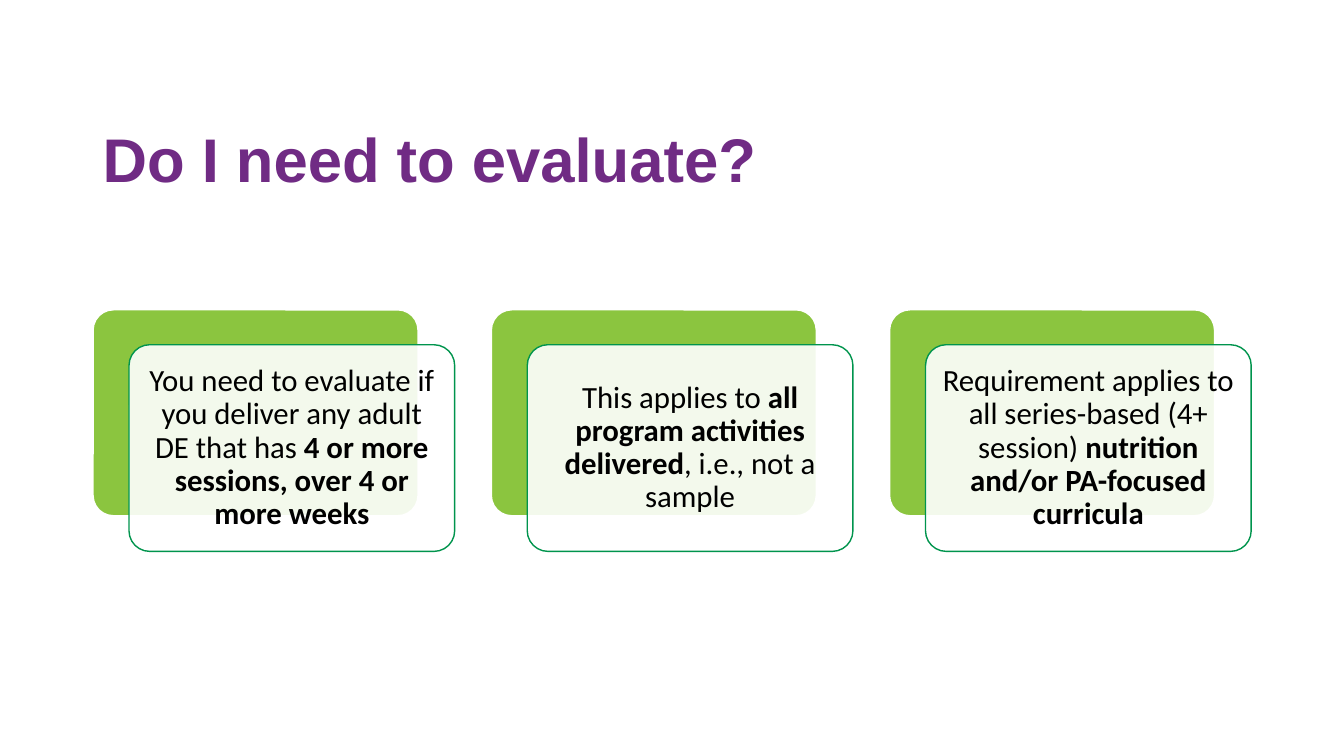
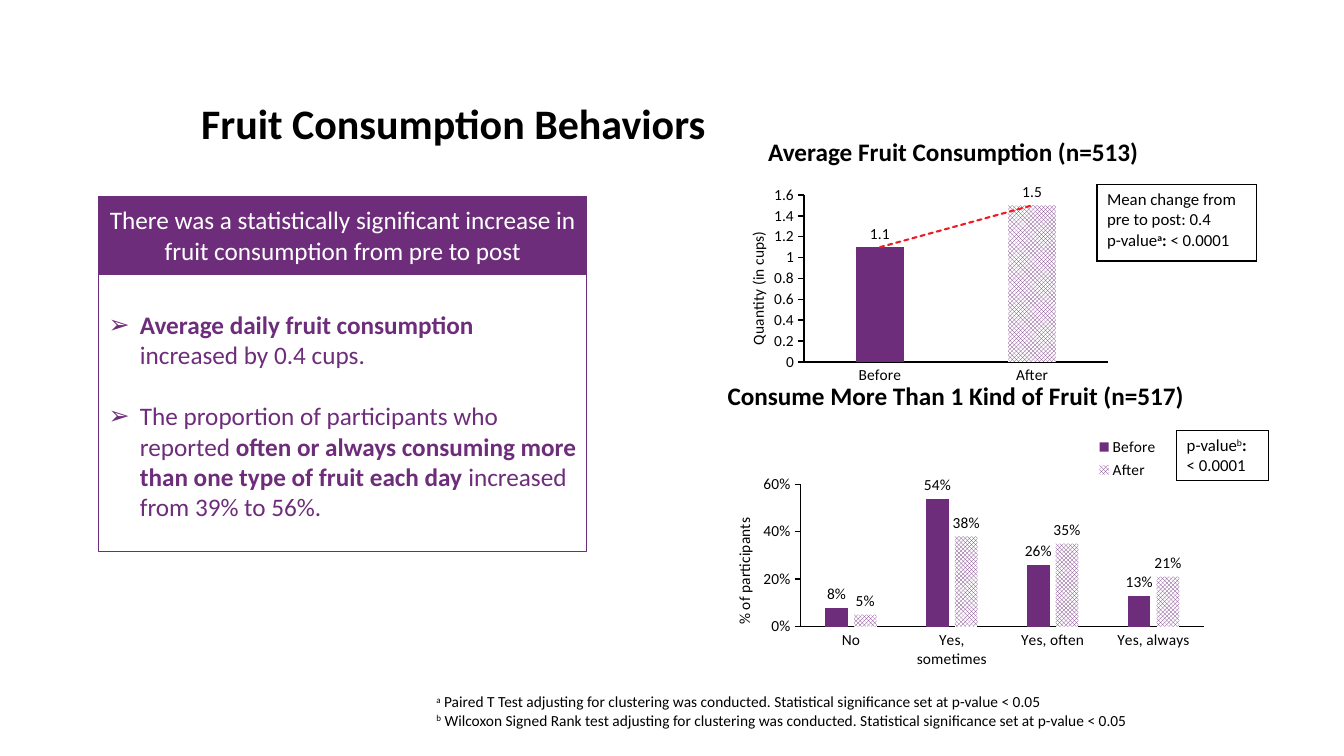
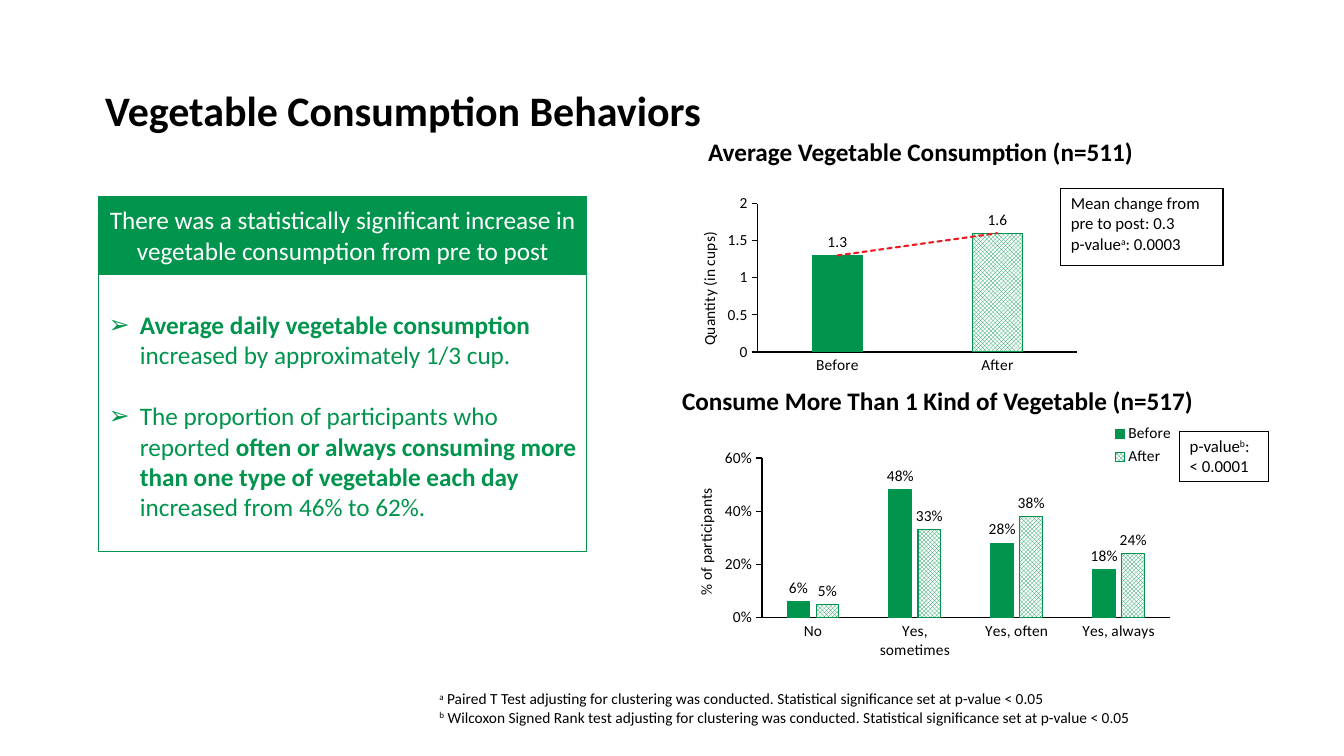
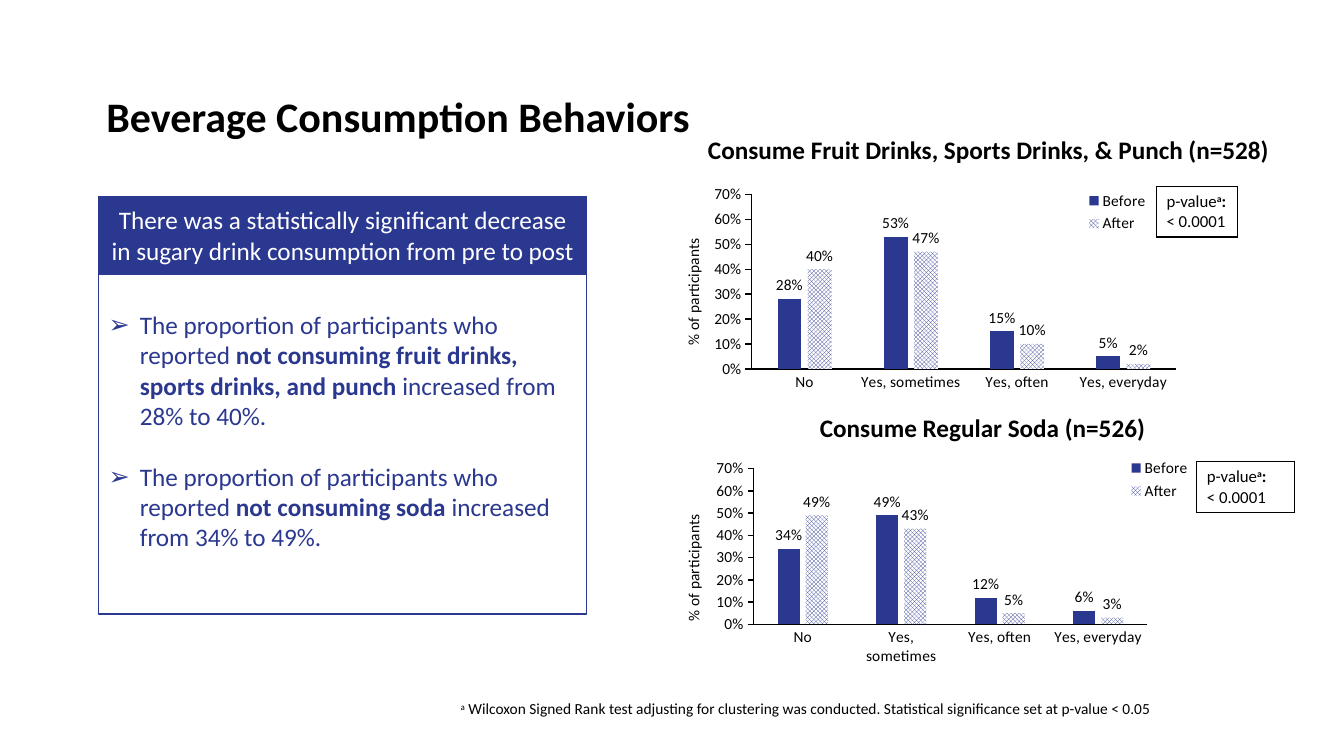
from lxml import etree
from pptx import Presentation
from pptx.chart.data import CategoryChartData
from pptx.dml.color import RGBColor
from pptx.enum.chart import XL_CHART_TYPE, XL_LABEL_POSITION, XL_LEGEND_POSITION, XL_TICK_MARK
from pptx.enum.dml import MSO_PATTERN
from pptx.enum.shapes import MSO_SHAPE
from pptx.enum.text import MSO_ANCHOR, PP_ALIGN
from pptx.oxml import parse_xml
from pptx.oxml.ns import nsdecls, qn
from pptx.util import Inches, Pt

COLORS = {
    "purple": "6E2D7B", "title": "702B84", "green": "00944D", "lime": "8BC53F",
    "blue": "2B388F", "red": "EC1C24", "black": "000000", "white": "FFFFFF",
}
FONT = "Calibri"
PANEL_LEFT, PANEL_TOP, PANEL_WIDTH, BANNER_HEIGHT = 0.98, 1.95, 4.84, 0.76

CARD_TITLE = "Do I need to evaluate?"
CARDS = [
    ["You need to evaluate if you deliver any adult DE that has ",
     ("4 or more sessions, over 4 or more weeks", "b")],
    ["This applies to ", ("all program activities delivered", "b"), ", i.e., not a sample"],
    ["Requirement applies to all series-based (4+ session) ",
     ("nutrition and/or PA-focused curricula", "b")],
]

PAIRED = [("a", "s"), " Paired T Test adjusting for clustering was conducted. "
          "Statistical significance set at p-value < 0.05"]


def wilcoxon(mark):
    return [(mark, "s"), " Wilcoxon Signed Rank test adjusting for clustering was conducted. "
            "Statistical significance set at p-value < 0.05"]


CUPS = {"axis": "Quantity (in cups)", "format": "General", "cats": ["Before", "After"]}
KINDS = {"axis": "% of participants", "format": "0%",
         "cats": ["No", "Yes, sometimes", "Yes, often", "Yes, always"], "max": 0.6, "step": 0.2}
DRINKS = {**KINDS, "cats": ["No", "Yes, sometimes", "Yes, often", "Yes, everyday"],
          "max": 0.7, "step": 0.1}
P_BOLD = [["p-value", ("a", "bs"), (":", "b")], ["< 0.0001"]]

RESULTS = [
    {
        "title": "Fruit Consumption Behaviors", "center": 4.5, "top": 0.84, "color": "purple",
        "banner": "There was a statistically significant increase in fruit consumption from pre to post",
        "body": 2.75,
        "bullets": [
            [("Average daily fruit consumption ", "b"), "increased by 0.4 cups."],
            ["The proportion of participants who reported ",
             ("often or always consuming more than one type of fruit each day ", "b"),
             "increased from 39% to 56%."],
        ],
        "notes": [PAIRED, wilcoxon("b")], "notes_at": (4.23, 6.82),
        "charts": [
            {**CUPS, "heading": "Average Fruit Consumption (n=513)", "heading_at": (7.05, 1.3, 4.81),
             "at": (7.15, 1.79, 3.92, 2.07), "plot": (0.21, 0.07, 0.77, 0.8), "axis_at": (0.06, 0.23),
             "max": 1.6, "step": 0.2, "series": {"Series 1": [1.1, 1.5]},
             "stat": [["Mean change from pre to post: 0.4"],
                      ["p-value", ("a", "bs"), (": ", "b"), "< 0.0001"]],
             "stat_at": (10.88, 1.83, 1.58, 0.76)},
            {**KINDS, "heading": "Consume More Than 1 Kind of Fruit (n=517)",
             "heading_at": (7.01, 3.72, 4.94),
             "at": (7.15, 4.15, 4.94, 2.52), "plot": (0.16, 0.26, 0.81, 0.56), "axis_at": (0.02, 0.38),
             "legend_at": (0.75, 0.06),
             "series": {"Before": [0.08, 0.54, 0.26, 0.13], "After": [0.05, 0.38, 0.35, 0.21]},
             "stat": [["p-value", ("b", "s"), (":", "b")], ["< 0.0001"]],
             "stat_at": (11.67, 4.27, 0.91, 0.5)},
        ],
    },
    {
        "title": "Vegetable Consumption Behaviors", "center": 4, "top": 0.71, "color": "green",
        "banner": "There was a statistically significant increase in vegetable consumption from pre to post",
        "body": 2.75, "outline": True,
        "bullets": [
            [("Average daily vegetable consumption ", "b"), "increased by approximately 1/3 cup."],
            ["The proportion of participants who reported ",
             ("often or always consuming more than one type of vegetable each day", "b"),
             " increased from 46% to 62%."],
        ],
        "notes": [PAIRED, wilcoxon("b")], "notes_at": (4.26, 6.79),
        "charts": [
            {**CUPS, "heading": "Average Vegetable Consumption (n=511)", "heading_at": (6.67, 1.3, 4.92),
             "at": (6.78, 1.56, 4.07, 2.3), "plot": (0.18, 0.2, 0.78, 0.64), "axis_at": (0.03, 0.31),
             "max": 2, "step": 0.5, "series": {"Series 1": [1.3, 1.6]},
             "stat": [["Mean change from pre to post: 0.3"], ["p-value", ("a", "s"), ": 0.0003"]],
             "stat_at": (10.52, 1.87, 1.61, 0.76)},
            {**KINDS, "heading": "Consume More Than 1 Kind of Vegetable (n=517)",
             "heading_at": (6.62, 3.77, 5.36),
             "at": (6.77, 4.17, 4.93, 2.68), "plot": (0.16, 0.14, 0.82, 0.59), "axis_at": (0.02, 0.24),
             "legend_at": (0.86, 0),
             "series": {"Before": [0.06, 0.48, 0.28, 0.18], "After": [0.05, 0.33, 0.38, 0.24]},
             "stat": [["p-value", ("b", "s"), ":"], ["< 0.0001"]],
             "stat_at": (11.7, 4.28, 0.88, 0.5)},
        ],
    },
    {
        "title": "Beverage Consumption Behaviors", "center": 3.95, "top": 0.77, "color": "blue",
        "banner": "There was a statistically significant decrease in sugary drink consumption from pre to post",
        "body": 3.37,
        "bullets": [
            ["The proportion of participants who reported ",
             ("not consuming fruit drinks, sports drinks, and punch ", "b"),
             "increased from 28% to 40%."],
            ["The proportion of participants who reported ", ("not consuming soda ", "b"),
             "increased from 34% to 49%."],
        ],
        "notes": [wilcoxon("a")], "notes_at": (4.47, 6.89),
        "charts": [
            {**DRINKS, "heading": "Consume Fruit Drinks, Sports Drinks, & Punch (n=528)",
             "heading_at": (6.67, 1.28, 6.27),
             "at": (6.64, 1.74, 5.08, 2.37), "plot": (0.16, 0.08, 0.83, 0.73), "axis_at": (0.02, 0.25),
             "legend_at": (0.81, 0.05),
             "series": {"Before": [0.28, 0.53, 0.15, 0.05], "After": [0.4, 0.47, 0.1, 0.02]},
             "stat": P_BOLD, "stat_at": (11.47, 1.85, 0.8, 0.5)},
            {**DRINKS, "heading": "Consume Regular Soda (n=526)", "heading_at": (7.14, 4.04, 5.21),
             "at": (6.64, 4.51, 5.21, 2.34), "plot": (0.16, 0.06, 0.75, 0.66), "axis_at": (0.02, 0.24),
             "legend_at": (0.87, 0),
             "series": {"Before": [0.34, 0.49, 0.12, 0.06], "After": [0.49, 0.43, 0.05, 0.03]},
             "stat": P_BOLD, "stat_at": (11.87, 4.58, 0.97, 0.5)},
        ],
    },
]


def rgb(name):
    return RGBColor.from_string(COLORS[name])


def inches(values):
    return [Inches(value) for value in values]


def set_font(font, size, color="black", bold=False, name=FONT):
    font.size, font.bold, font.name = Pt(size), bold, name
    font.color.rgb = rgb(color)


def write(frame, paragraphs, size, color="black", bold=False, align=PP_ALIGN.LEFT, name=FONT):
    frame.word_wrap = True
    for index, runs in enumerate(paragraphs):
        para = frame.paragraphs[0] if index == 0 else frame.add_paragraph()
        para.alignment = align
        for run in runs:
            text, style = (run, "") if isinstance(run, str) else run
            span = para.add_run()
            span.text = text
            set_font(span.font, size, color, bold or "b" in style, name)
            if "s" in style:
                span._r.get_or_add_rPr().set("baseline", "30000")


def add_text(page, at, paragraphs, size, anchor=MSO_ANCHOR.TOP, **style):
    box = page.shapes.add_textbox(*inches(at))
    box.text_frame.vertical_anchor = anchor
    write(box.text_frame, paragraphs, size, **style)


def add_box(page, at, fill, line, width=1, kind=MSO_SHAPE.RECTANGLE):
    box = page.shapes.add_shape(kind, *inches(at))
    box.shadow.inherit = False
    box.fill.solid()
    box.fill.fore_color.rgb = rgb(fill)
    box.line.color.rgb = rgb(line)
    box.line.width = Pt(width)
    box.text_frame.vertical_anchor = MSO_ANCHOR.MIDDLE
    if kind == MSO_SHAPE.ROUNDED_RECTANGLE:
        box.adjustments[0] = 0.1
    return box


def add_bullets(page, result):
    color = result["color"]
    at = PANEL_LEFT, PANEL_TOP + BANNER_HEIGHT + 0.01, PANEL_WIDTH, result["body"]
    frame = add_box(page, at, "white", color).text_frame
    frame.vertical_anchor = MSO_ANCHOR.TOP
    frame.margin_top = Inches(0.35)
    write(frame, result["bullets"], 18, color)
    for index, para in enumerate(frame.paragraphs):
        if index:
            para.space_before = Pt(22)
        properties = para._p.get_or_add_pPr()
        properties.set("marL", str(Inches(0.31)))
        properties.set("indent", str(-Inches(0.31)))
        etree.SubElement(properties, qn("a:buFont")).set("typeface", "Wingdings")
        etree.SubElement(properties, qn("a:buChar")).set("char", "➢")
        properties[-2].set("typeface", "Arial")


def add_stat(page, at, paragraphs):
    table = page.shapes.add_table(1, 1, *inches(at)).table
    table.first_row = table.horz_banding = False
    cell = table.cell(0, 0)
    cell.fill.background()
    write(cell.text_frame, paragraphs, 12)
    for index, side in enumerate(("lnL", "lnR", "lnT", "lnB")):
        cell._tc.get_or_add_tcPr().insert(index, parse_xml(
            f'<a:{side} {nsdecls("a")} w="12700"><a:solidFill>'
            f'<a:srgbClr val="{COLORS["black"]}"/></a:solidFill></a:{side}>'))


def place(parent, before, position, target=""):
    old = parent.find(qn("c:layout"))
    if old is not None:
        parent.remove(old)
    layout = etree.Element(qn("c:layout"))
    manual = etree.SubElement(layout, qn("c:manualLayout"))
    fields = [("layoutTarget", target)] if target else []
    fields += [("xMode", "edge"), ("yMode", "edge"), *zip("xywh", position)]
    for tag, value in fields:
        etree.SubElement(manual, qn(f"c:{tag}")).set("val", str(value))
    parent.find(qn(before)).addprevious(layout)


def paint_bar(shape_format, color, hatched, outline):
    fill, line = shape_format.fill, shape_format.line
    if hatched:
        fill.patterned()
        fill.pattern = MSO_PATTERN.TRELLIS
        fill.fore_color.rgb, fill.back_color.rgb = rgb(color), rgb("white")
    else:
        fill.solid()
        fill.fore_color.rgb = rgb(color)
    if outline:
        line.color.rgb, line.width = rgb(color), Pt(0.75)
    else:
        line.fill.background()


def add_trend(series):
    series._element.find(qn("c:cat")).addprevious(parse_xml(
        f'<c:trendline {nsdecls("c", "a")}><c:spPr><a:ln w="19050" cap="rnd"><a:solidFill>'
        f'<a:srgbClr val="{COLORS["red"]}"/></a:solidFill><a:prstDash val="sysDash"/></a:ln></c:spPr>'
        '<c:trendlineType val="linear"/><c:dispRSqr val="0"/><c:dispEq val="0"/></c:trendline>'))


def style_axes(chart, item):
    for axis, tick in ((chart.category_axis, XL_TICK_MARK.NONE), (chart.value_axis, XL_TICK_MARK.OUTSIDE)):
        axis.has_major_gridlines = False
        axis.major_tick_mark, axis.minor_tick_mark = tick, XL_TICK_MARK.NONE
        axis.format.line.color.rgb, axis.format.line.width = rgb("black"), Pt(1)
        set_font(axis.tick_labels.font, 11)
    axis.minimum_scale, axis.maximum_scale, axis.major_unit = 0, item["max"], item["step"]
    axis.tick_labels.number_format = item["format"]
    axis.tick_labels.number_format_is_linked = False
    frame = axis.axis_title.text_frame
    write(frame, [[item["axis"]]], 11, align=PP_ALIGN.CENTER)
    frame._txBody.bodyPr.set("rot", "-5400000")
    frame._txBody.bodyPr.set("vert", "horz")
    place(axis.axis_title._element, "c:overlay", item["axis_at"])


def add_column_chart(page, item, color, outline):
    data = CategoryChartData(number_format=item["format"])
    data.categories = item["cats"]
    for name, values in item["series"].items():
        data.add_series(name, values)
    chart = page.shapes.add_chart(XL_CHART_TYPE.COLUMN_CLUSTERED, *inches(item["at"]), data).chart
    chart.has_title = False
    set_font(chart.font, 10)
    space = chart._chartSpace
    space.find(qn("c:txPr")).addprevious(parse_xml(
        f'<c:spPr {nsdecls("c", "a")}><a:noFill/><a:ln><a:noFill/></a:ln></c:spPr>'))
    style_axes(chart, item)

    plot = chart.plots[0]
    plot.vary_by_categories = False
    plot.gap_width, plot.overlap = 219, -27
    plot.has_data_labels = True
    labels = plot.data_labels
    labels.show_value, labels.position = True, XL_LABEL_POSITION.OUTSIDE_END
    labels.number_format, labels.number_format_is_linked = item["format"], False
    set_font(labels.font, 11)
    place(space.chart.plotArea, "c:barChart", item["plot"], "inner")

    for index, series in enumerate(plot.series):
        paint_bar(series.format, color, index == 1, outline)
    if len(item["series"]) == 1:
        paint_bar(series.points[1].format, color, True, outline)
        add_trend(series)

    chart.has_legend = "legend_at" in item
    if chart.has_legend:
        chart.legend.position = XL_LEGEND_POSITION.CORNER
        chart.legend.include_in_layout = False
        set_font(chart.legend.font, 11)
        place(chart.legend._element, "c:overlay", item["legend_at"])


def build_cards(page):
    add_text(page, (0.92, 0.84, 11.5, 1.45), [[CARD_TITLE]], 44, anchor=MSO_ANCHOR.MIDDLE,
             color="title", bold=True, name="Arial")
    rounded = MSO_SHAPE.ROUNDED_RECTANGLE
    for column, runs in enumerate(CARDS):
        left = 0.92 + 3.95 * column
        add_box(page, (left, 3.07, 3.23, 2.05), "lime", "white", 1.5, rounded)
        card = add_box(page, (left + 0.36, 3.42, 3.23, 2.05), "white", "green", 1, rounded)
        tint = card.fill._xPr.find(qn("a:solidFill"))[0]
        etree.SubElement(tint, qn("a:alpha")).set("val", "90000")
        frame = card.text_frame
        frame.margin_left = frame.margin_right = Inches(0.09)
        frame.margin_top = frame.margin_bottom = Inches(0.09)
        write(frame, [runs], 22, align=PP_ALIGN.CENTER)
        frame.paragraphs[0].line_spacing = 0.9


def build_result(page, result):
    color, center = result["color"], PP_ALIGN.CENTER
    add_text(page, (result["center"] - 3.5, result["top"], 7, 0.76), [[result["title"]]], 30,
             anchor=MSO_ANCHOR.MIDDLE, bold=True, align=center)
    banner = add_box(page, (PANEL_LEFT, PANEL_TOP, PANEL_WIDTH, BANNER_HEIGHT), color, color)
    write(banner.text_frame, [[result["banner"]]], 18, "white", align=center)
    add_bullets(page, result)
    add_text(page, (*result["notes_at"], 7.53, 0.1 + 0.19 * len(result["notes"])), result["notes"], 11)
    for item in result["charts"]:
        add_text(page, (*item["heading_at"], 0.4), [[item["heading"]]], 18, bold=True, align=center)
        add_stat(page, item["stat_at"], item["stat"])
    for item in result["charts"]:
        add_column_chart(page, item, color, result.get("outline", False))


def main():
    deck = Presentation()
    deck.slide_width, deck.slide_height = Inches(13.33), Inches(7.5)
    blank = deck.slide_layouts[6]
    build_cards(deck.slides.add_slide(blank))
    for result in RESULTS:
        build_result(deck.slides.add_slide(blank), result)
    deck.save("out.pptx")


if __name__ == "__main__":
    main()
